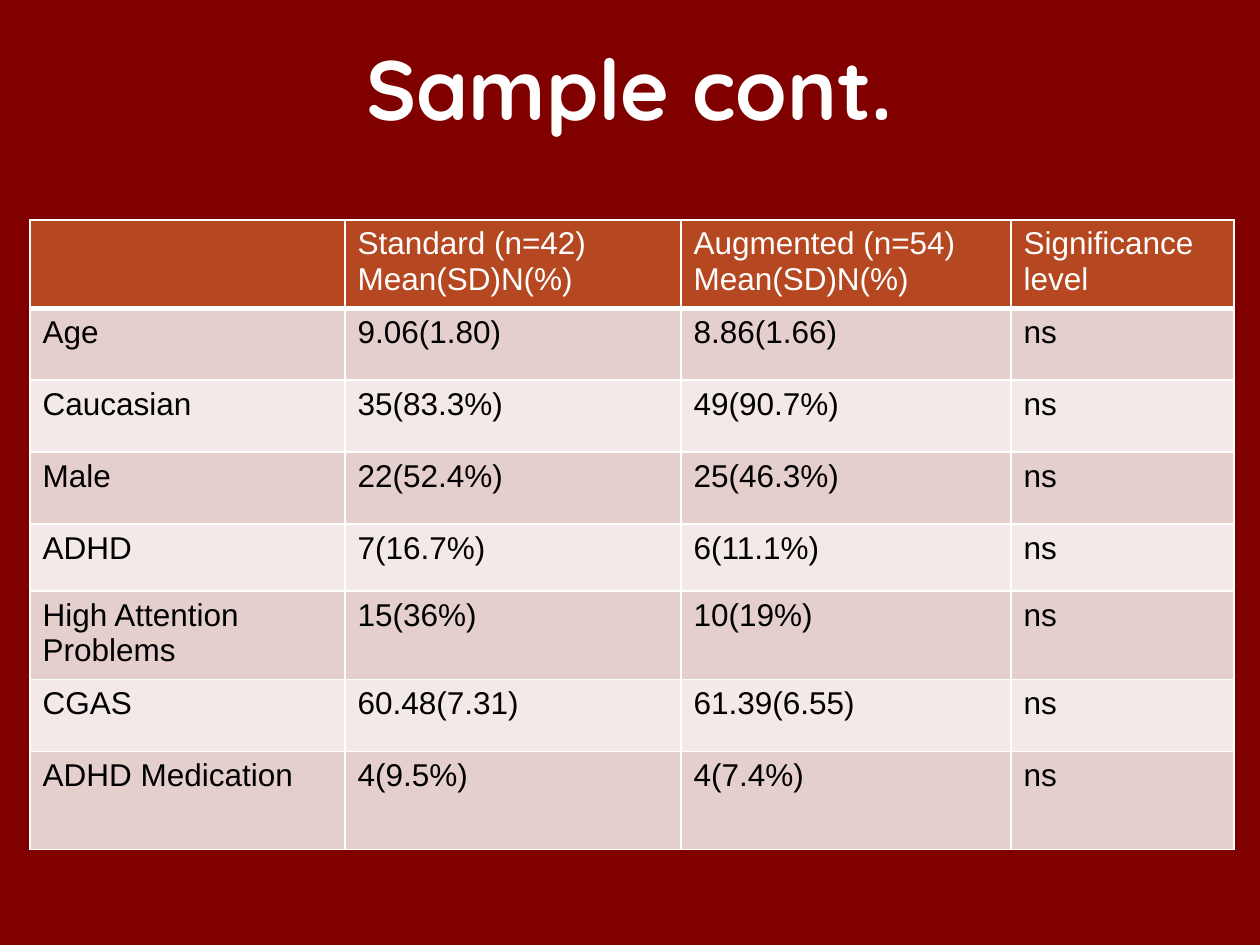
from dataclasses import dataclass

from lxml import etree
from pptx import Presentation
from pptx.dml.color import RGBColor
from pptx.enum.text import MSO_ANCHOR, PP_ALIGN
from pptx.oxml.ns import qn
from pptx.util import Emu, Pt

EMU_PER_PX = 914400 / 126
BLANK_LAYOUT = 6
CENTER = PP_ALIGN.CENTER
MIDDLE = MSO_ANCHOR.MIDDLE

COLORS = {
    "background": "800000",
    "white": "FFFFFF",
    "black": "000000",
    "header": "B54721",
    "band_dark": "E5CFCD",
    "band_light": "F3E9E8",
}


@dataclass(frozen=True)
class Row:
    height: int
    label: str
    standard: str
    augmented: str
    significance: str = "ns"

    @property
    def texts(self) -> tuple[str, ...]:
        return self.label, self.standard, self.augmented, self.significance


COLUMN_WIDTHS = (315, 336, 330, 223)
ROWS = (
    Row(85, "", "Standard (n=42) Mean(SD)N(%)",
        "Augmented (n=54) Mean(SD)N(%)", "Significance level"),
    Row(72, "Age", "9.06(1.80)", "8.86(1.66)"),
    Row(72, "Caucasian", "35(83.3%)", "49(90.7%)"),
    Row(72, "Male", "22(52.4%)", "25(46.3%)"),
    Row(67, "ADHD", "7(16.7%)", "6(11.1%)"),
    Row(85, "High Attention Problems", "15(36%)", "10(19%)"),
    Row(72, "CGAS", "60.48(7.31)", "61.39(6.55)"),
    Row(98, "ADHD Medication", "4(9.5%)", "4(7.4%)"),
)


def px(length: int) -> Emu:
    return Emu(round(length * EMU_PER_PX))


def color(name: str) -> RGBColor:
    return RGBColor.from_string(COLORS[name])


def style_font(font, name: str, size: int, color_name: str, bold: bool = False) -> None:
    font.name = name
    font.size = Pt(size)
    font.bold = bold
    font.color.rgb = color(color_name)


def add_border(cell, side: str, width: int) -> None:
    properties = cell._tc.get_or_add_tcPr()
    line = etree.SubElement(properties, qn(f"a:ln{side}"), w=str(Pt(width)))
    fill = etree.SubElement(line, qn("a:solidFill"))
    etree.SubElement(fill, qn("a:srgbClr"), val=COLORS["white"])


def draw_title(slide, text: str) -> None:
    shape = slide.shapes.add_textbox(px(107), px(13), px(1045), px(157))
    frame = shape.text_frame
    frame.word_wrap = True
    frame.vertical_anchor = MIDDLE
    paragraph = frame.paragraphs[0]
    paragraph.text = text
    paragraph.alignment = CENTER
    paragraph.line_spacing = 0.95
    style_font(paragraph.font, "Quicksand", 48, "white", bold=True)


def draw_cell(cell, text: str, row_index: int) -> None:
    is_header = row_index == 0
    # Thick rule between the header and the body
    top = 3 if row_index == 1 else 1
    bottom = 3 if is_header else 1
    for side, width in (("L", 1), ("R", 1), ("T", top), ("B", bottom)):
        add_border(cell, side, width)

    band = "band_dark" if row_index % 2 else "band_light"
    cell.fill.solid()
    cell.fill.fore_color.rgb = color("header" if is_header else band)

    paragraph = cell.text_frame.paragraphs[0]
    paragraph.text = text
    style_font(paragraph.font, "Arial", 18, "white" if is_header else "black")


def draw_table(slide, rows: tuple[Row, ...]) -> None:
    width = sum(COLUMN_WIDTHS)
    height = sum(row.height for row in rows)
    table = slide.shapes.add_table(
        len(rows), len(COLUMN_WIDTHS), px(30), px(220), px(width), px(height)
    ).table
    for column, column_width in zip(table.columns, COLUMN_WIDTHS):
        column.width = px(column_width)
    for row_index, row in enumerate(rows):
        table.rows[row_index].height = px(row.height)
        for column_index, text in enumerate(row.texts):
            draw_cell(table.cell(row_index, column_index), text, row_index)


def main() -> None:
    presentation = Presentation()
    presentation.slide_width = px(1260)
    presentation.slide_height = px(945)
    slide = presentation.slides.add_slide(presentation.slide_layouts[BLANK_LAYOUT])

    # Background
    slide.background.fill.solid()
    slide.background.fill.fore_color.rgb = color("background")

    # Title and sample comparison
    draw_title(slide, "Sample cont.")
    draw_table(slide, ROWS)

    presentation.save("out.pptx")


if __name__ == "__main__":
    main()
